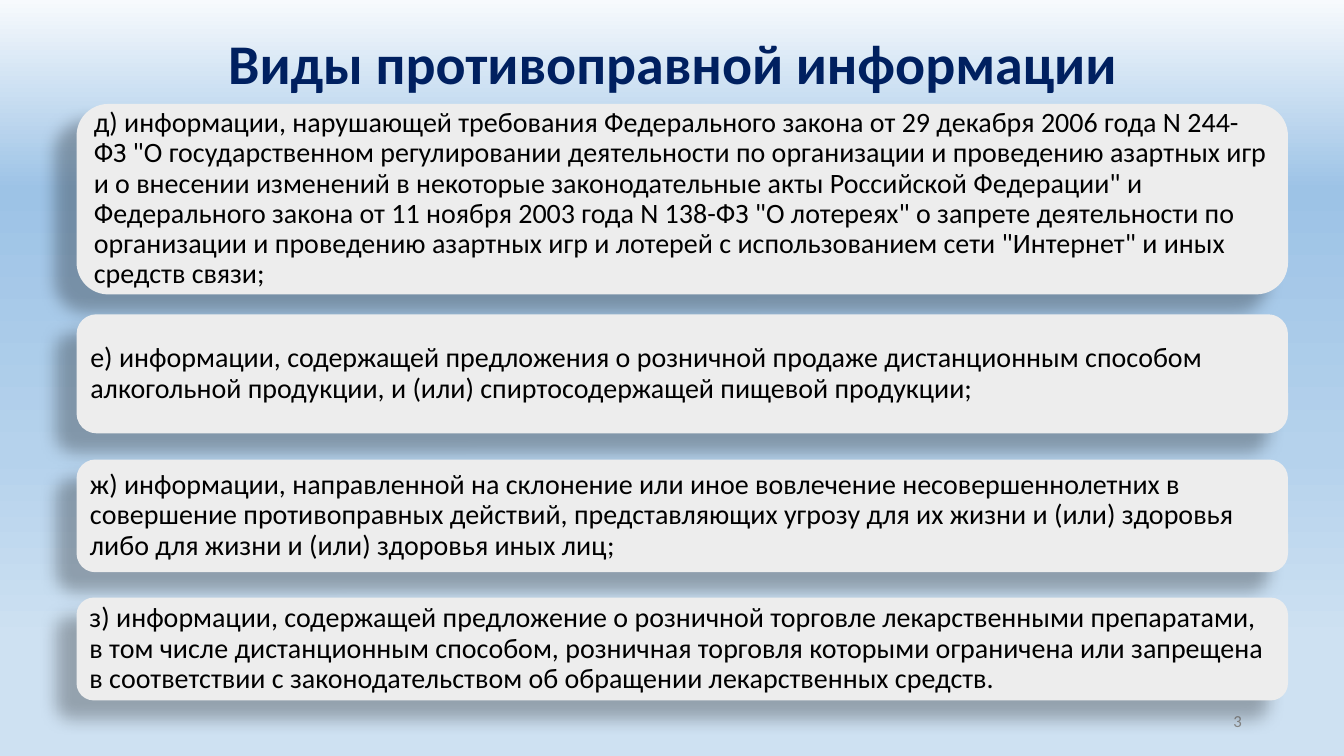
"""Build the slide on kinds of unlawful information."""
from dataclasses import dataclass

from lxml import etree
from pptx import Presentation
from pptx.dml.color import RGBColor
from pptx.enum.shapes import MSO_SHAPE
from pptx.enum.text import MSO_ANCHOR, PP_ALIGN
from pptx.oxml.ns import qn
from pptx.shapes.base import BaseShape
from pptx.slide import Slide
from pptx.util import Cm, Pt

ROUNDED = MSO_SHAPE.ROUNDED_RECTANGLE
MIDDLE = MSO_ANCHOR.MIDDLE
LEFT, CENTER, RIGHT = PP_ALIGN.LEFT, PP_ALIGN.CENTER, PP_ALIGN.RIGHT
TITLE_ONLY = 5


@dataclass(frozen=True)
class Theme:
    """Colours and type sizes of the slide."""
    font: str = "Calibri"
    title: str = "002060"
    body: str = "000000"
    number: str = "8C8C8C"
    card: str = "EDEDED"
    shadow: str = "000000"
    sky: tuple[tuple[int, str], ...] = (
        (0, "F7FAFD"), (25, "9DC3E6"), (60, "B5D2EC"), (85, "CEE1F2"))
    title_size: int = 40
    body_size: int = 20
    number_size: int = 12


@dataclass(frozen=True)
class Card:
    """A rounded panel with one kind of information."""
    top: float
    height: float
    text: str


THEME = Theme()
CARD_LEFT, CARD_WIDTH, CARD_INSET = 1.93, 30.53, 0.2
CARDS = (
    Card(2.62, 4.8, 'д) информации, нарушающей требования Федерального закона от 29 декабря '
         '2006 года N 244-ФЗ "О государственном регулировании деятельности по организации и '
         'проведению азартных игр и о внесении изменений в некоторые законодательные акты '
         'Российской Федерации" и Федерального закона от 11 ноября 2003 года N 138-ФЗ '
         '"О лотереях" о запрете деятельности по организации и проведению азартных игр и '
         'лотерей с использованием сети "Интернет" и иных средств связи;'),
    Card(7.92, 3, 'е) информации, содержащей предложения о розничной продаже дистанционным '
         'способом алкогольной продукции, и (или) спиртосодержащей пищевой продукции;'),
    Card(11.58, 2.84, 'ж) информации, направленной на склонение или иное вовлечение '
         'несовершеннолетних в совершение противоправных действий, представляющих угрозу для '
         'их жизни и (или) здоровья либо для жизни и (или) здоровья иных лиц;'),
    Card(15.06, 2.59, 'з) информации, содержащей предложение о розничной торговле '
         'лекарственными препаратами, в том числе дистанционным способом, розничная торговля '
         'которыми ограничена или запрещена в соответствии с законодательством об обращении '
         'лекарственных средств.'),
)


def set_attrs(target: object, values: dict) -> None:
    """Set each named attribute on the target."""
    for name, value in values.items():
        setattr(target, name, value)


def write(sp: BaseShape, text: str, size: int, color: str, align: PP_ALIGN,
          bold: bool = False, spacing: float = 1.0) -> None:
    """Put one formatted paragraph into a shape."""
    tf = sp.text_frame
    set_attrs(tf, {"word_wrap": True, "vertical_anchor": MIDDLE})
    p = tf.paragraphs[0]
    set_attrs(p, {"alignment": align, "line_spacing": spacing})
    r = p.add_run()
    r.text = text
    set_attrs(r.font, {"name": THEME.font, "size": Pt(size), "bold": bold})
    r.font.color.rgb = RGBColor.from_string(color)


def paint_background(s: Slide) -> None:
    """Fill the background with the vertical sky gradient."""
    fill = s.background.fill
    fill.gradient()
    fill.gradient_angle = 270
    stops = next(s.element.iter(qn("a:gsLst")))
    for stop in list(stops):
        stops.remove(stop)
    for percent, color in THEME.sky:
        stop = etree.SubElement(stops, qn("a:gs"), pos=str(percent * 1000))
        etree.SubElement(stop, qn("a:srgbClr"), val=color)


def add_shadow(sp: BaseShape) -> None:
    """Give a shape a soft shadow to the lower left."""
    sp.shadow.inherit = False
    effects = sp.element.spPr.find(qn("a:effectLst"))
    shadow = etree.SubElement(effects, qn("a:outerShdw"), blurRad=str(Pt(11.8)),
                              dist=str(Pt(19.7)), dir=str(141 * 60000),
                              algn="ctr", rotWithShape="0")
    color = etree.SubElement(shadow, qn("a:srgbClr"), val=THEME.shadow)
    etree.SubElement(color, qn("a:alpha"), val="28000")


def add_card(s: Slide, card: Card) -> None:
    """Draw a card with its text."""
    sp = s.shapes.add_shape(ROUNDED, Cm(CARD_LEFT), Cm(card.top),
                            Cm(CARD_WIDTH), Cm(card.height))
    sp.fill.solid()
    sp.fill.fore_color.rgb = RGBColor.from_string(THEME.card)
    sp.line.fill.background()
    add_shadow(sp)
    sides = ("left", "top", "right", "bottom")
    set_attrs(sp.text_frame, {f"margin_{side}": Cm(CARD_INSET) for side in sides})
    write(sp, card.text, THEME.body_size, THEME.body, LEFT, spacing=0.9)


def main() -> None:
    """Build and save the presentation."""
    prs = Presentation()
    set_attrs(prs, {"slide_width": Cm(33.87), "slide_height": Cm(19.05)})
    s = prs.slides.add_slide(prs.slide_layouts[TITLE_ONLY])
    paint_background(s)
    title = s.shapes.title
    set_attrs(title, {"left": Cm(2.34), "top": Cm(0.64),
                      "width": Cm(29.21), "height": Cm(2.06)})
    write(title, "Виды противоправной информации", THEME.title_size, THEME.title,
          CENTER, bold=True, spacing=0.9)
    number = s.shapes.add_textbox(Cm(23.93), Cm(17.65), Cm(7.62), Cm(1.02))
    write(number, "3", THEME.number_size, THEME.number, RIGHT)
    for card in CARDS:
        add_card(s, card)
    prs.save("out.pptx")


if __name__ == "__main__":
    main()
